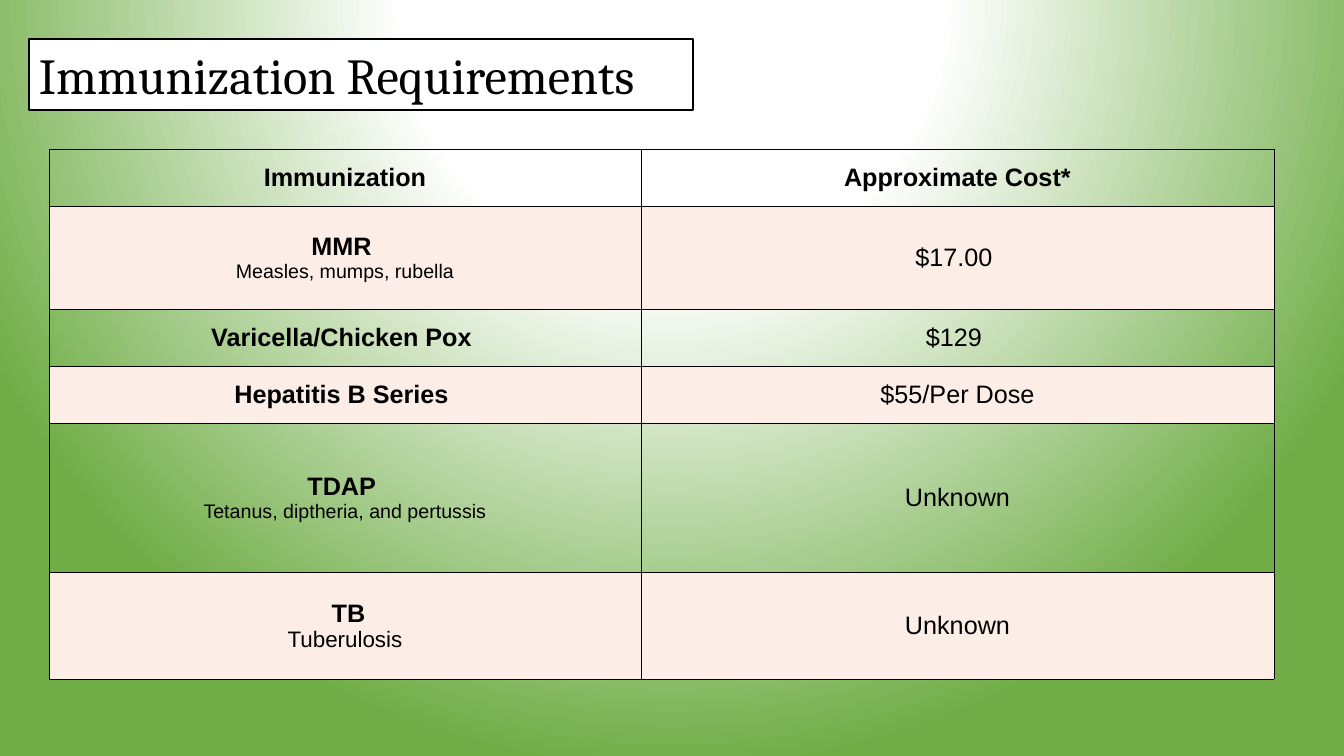
"""Build the slide listing immunization requirements and their costs."""
from pptx import Presentation
from pptx.dml.color import RGBColor
from pptx.enum.text import MSO_ANCHOR as Anchor, PP_ALIGN as Align
from pptx.oxml import parse_xml
from pptx.oxml.ns import nsdecls
from pptx.util import Pt

PX = 914400 / 100.8
COLORS = {"black": "000000", "white": "FFFFFF", "green": "70AD47", "peach": "FDEDE7"}


def px(length):
    return round(length * PX)


def style_run(run, font_name, size, bold=False):
    run.font.name = font_name
    run.font.size = Pt(size)
    run.font.bold = bold
    run.font.color.rgb = RGBColor.from_string(COLORS["black"])


prs = Presentation()
prs.slide_width, prs.slide_height = px(1344), px(756)
slide = prs.slides.add_slide(prs.slide_layouts[6])

stops = "".join(
    f'<a:gs pos="{percent * 1000}"><a:srgbClr val="{COLORS[name]}"/></a:gs>'
    for percent, name in [(0, "white"), (35, "white"), (100, "green")]
)
slide.element.cSld.insert(0, parse_xml(
    f'<p:bg {nsdecls("p", "a")}><p:bgPr><a:gradFill rotWithShape="1"><a:gsLst>{stops}</a:gsLst>'
    '<a:path path="circle"><a:fillToRect l="50000" t="-80000" r="50000" b="180000"/></a:path>'
    '</a:gradFill><a:effectLst/></p:bgPr></p:bg>'
))

title = slide.shapes.add_textbox(px(29), px(39), px(664), px(71))
title.fill.solid()
title.fill.fore_color.rgb = RGBColor.from_string(COLORS["white"])
title.line.color.rgb = RGBColor.from_string(COLORS["black"])
title.line.width = Pt(1)
title.text_frame.word_wrap = True
title.text_frame.text = "Immunization Requirements"
style_run(title.text_frame.paragraphs[0].runs[0], "Cambria", 36)

COLUMN_WIDTHS = [592, 633]
ROWS = [
    (57, "Immunization", 18, "Approximate Cost*"),
    (103, "MMR \nMeasles, mumps, rubella", 14, "$17.00 "),
    (57, "Varicella/Chicken Pox ", 18, "$129 "),
    (57, "Hepatitis B Series ", 18, "$55/Per Dose"),
    (149, "TDAP \nTetanus, diptheria, and pertussis", 14, "Unknown"),
    (107, " TB\nTuberulosis", 16, "Unknown"),
]
costs = slide.shapes.add_table(
    len(ROWS), len(COLUMN_WIDTHS), px(49), px(149),
    px(sum(COLUMN_WIDTHS)), px(sum(row[0] for row in ROWS)),
).table
costs.first_row = costs.horz_banding = False
for column, width in zip(costs.columns, COLUMN_WIDTHS):
    column.width = px(width)

for row_index, (height, immunization, detail_size, cost) in enumerate(ROWS):
    costs.rows[row_index].height = px(height)
    for column_index, wording in enumerate([immunization, cost]):
        cell = costs.cell(row_index, column_index)
        cell.vertical_anchor = Anchor.MIDDLE
        cell.margin_left = cell.margin_right = cell.margin_top = px(1)
        cell.margin_bottom = 0
        paragraph = cell.text_frame.paragraphs[0]
        paragraph.text = wording
        paragraph.alignment = Align.CENTER
        heading, *details = paragraph.runs
        style_run(heading, "Arial", 18, bold=row_index == 0 or column_index == 0)
        for detail in details:
            style_run(detail, "Arial", detail_size)
        if row_index % 2:
            cell.fill.solid()
            cell.fill.fore_color.rgb = RGBColor.from_string(COLORS["peach"])
        else:
            cell.fill.background()
        properties = cell._tc.get_or_add_tcPr()
        for position, side in enumerate(["lnL", "lnR", "lnT", "lnB"]):
            properties.insert(position, parse_xml(
                f'<a:{side} {nsdecls("a")} w="{Pt(0.5)}"><a:solidFill>'
                f'<a:srgbClr val="{COLORS["black"]}"/></a:solidFill></a:{side}>'
            ))

prs.save("out.pptx")
